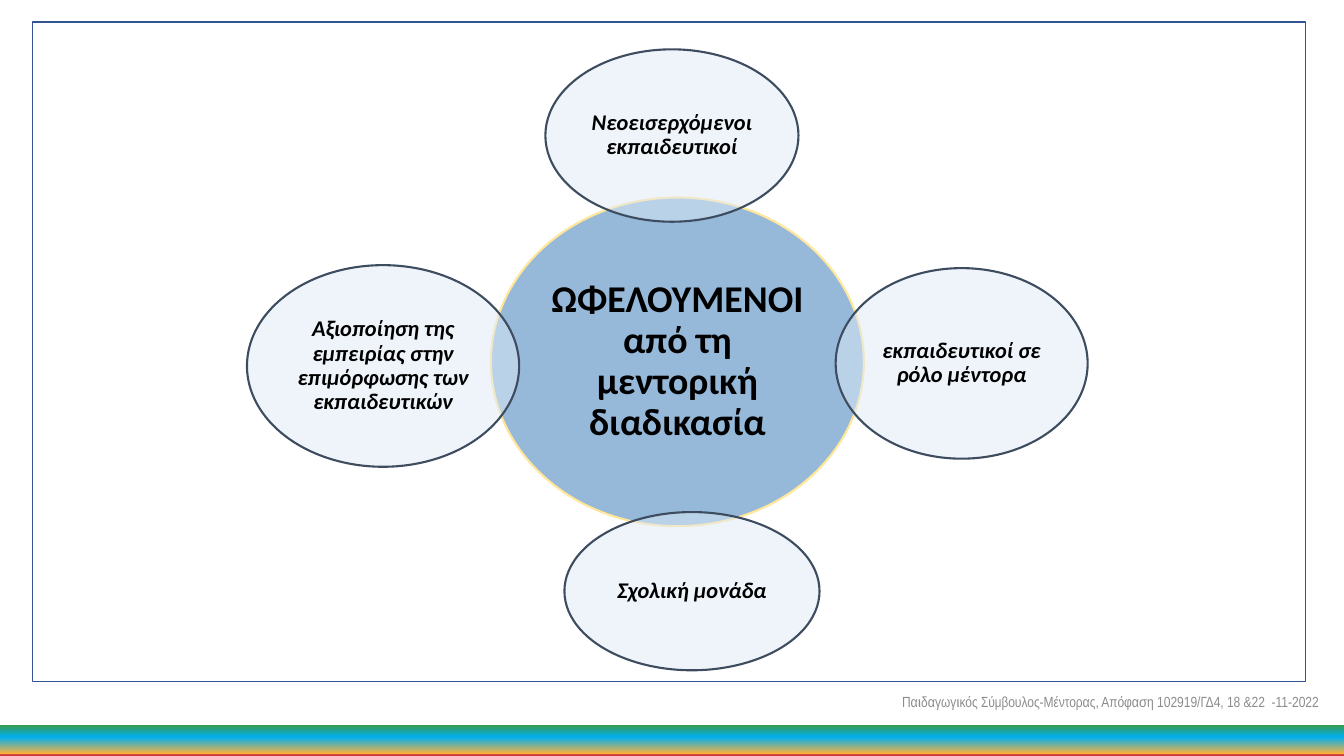
from lxml import etree
from pptx import Presentation
from pptx.dml.color import RGBColor
from pptx.enum.shapes import MSO_SHAPE
from pptx.enum.text import MSO_ANCHOR, PP_ALIGN
from pptx.oxml.ns import qn
from pptx.util import Inches, Pt

RECT, OVAL = MSO_SHAPE.RECTANGLE, MSO_SHAPE.OVAL
MIDDLE, CENTER = MSO_ANCHOR.MIDDLE, PP_ALIGN.CENTER

NAVY = RGBColor(0x32, 0x54, 0x91)
BLUE = RGBColor(0x2E, 0x75, 0xB6)
CREAM = RGBColor(0xFF, 0xE6, 0x99)
PALE = RGBColor(0xDE, 0xEB, 0xF7)
SLATE = RGBColor(0x3E, 0x4C, 0x60)
BLACK = RGBColor(0, 0, 0)
GRAY = RGBColor(0x8C, 0x8C, 0x8C)
STRIPE = [
    (0, RGBColor(0x39, 0x9A, 0x48)),
    (39, RGBColor(0x00, 0xB0, 0xF0)),
    (93, RGBColor(0xFB, 0xB0, 0x3B)),
    (96, RGBColor(0xCC, 0x33, 0x33)),
]

# Left, top, width and height in percent of the slide
FRAME = (2.4, 2.93, 94.73, 87.2)
HUB = (36.53, 26.13, 27.75, 43.47)
NOTE = (66.38, 90.13, 33.6, 5.33)
BAND = (0, 95.87, 100, 4.13)
GROUPS = [
    ("Νεοεισερχόμενοι εκπαιδευτικοί", (40.58, 6.53, 18.83, 22.8)),
    ("εκπαιδευτικοί σε ρόλο μέντορα", (62.18, 35.47, 18.75, 25.2)),
    ("Σχολική μονάδα", (42, 67.73, 18.98, 20.93)),
    ("Αξιοποίηση της εμπειρίας στην επιμόρφωσης των εκπαιδευτικών",
     (18.38, 35.07, 20.25, 26.67)),
]


class Canvas:
    main = "Calibri"
    small = "Arial Narrow"

    def __init__(self, deck):
        self.wide, self.high = deck.slide_width, deck.slide_height
        self.slide = deck.slides.add_slide(deck.slide_layouts[6])

    def place(self, box):
        """Turn percent shares into slide lengths."""
        sides = (self.wide, self.high) * 2
        return [round(share * side / 100) for share, side in zip(box, sides)]

    def shape(self, kind, box, line=None, width=1):
        item = self.slide.shapes.add_shape(kind, *self.place(box))
        item.shadow.inherit = False
        item.fill.background()
        if line is None:
            item.line.fill.background()
        else:
            item.line.color.rgb = line
            item.line.width = Pt(width)
        return item

    def label(self, frame, text, size, color, font, bold=False, slant=False):
        frame.word_wrap = True
        frame.vertical_anchor = MIDDLE
        para = frame.paragraphs[0]
        run = para.add_run()
        run.text = text
        run.font.name = font
        run.font.size = Pt(size)
        run.font.color.rgb = color
        run.font.bold, run.font.italic = bold, slant
        return para

    def bubble(self, text, box, fill, line, size, inset, slant):
        """Draw a half-clear ellipse with centred text."""
        item = self.shape(OVAL, box, line, 1.5)
        item.fill.solid()
        item.fill.fore_color.rgb = fill
        tint = item.element.spPr.find(qn("a:solidFill"))[0]
        etree.SubElement(tint, qn("a:alpha"), val="50000")
        frame = item.text_frame
        frame.margin_left = frame.margin_right = Inches(inset)
        frame.margin_top = frame.margin_bottom = Inches(inset)
        para = self.label(frame, text, size, BLACK, self.main, True, slant)
        para.alignment = CENTER
        para.line_spacing = 0.9

    def note(self, text, box):
        item = self.slide.shapes.add_textbox(*self.place(box))
        self.label(item.text_frame, text, 10.5, GRAY, self.small)

    def band(self, box, stops):
        """Draw a bar shaded from top to bottom."""
        item = self.shape(RECT, box)
        item.fill.gradient()
        item.fill.gradient_angle = 270
        shades = item.element.spPr.find(qn("a:gradFill")).find(qn("a:gsLst"))
        for old in list(shades):
            shades.remove(old)
        for share, color in stops:
            stop = etree.SubElement(shades, qn("a:gs"), pos=str(share * 1000))
            etree.SubElement(stop, qn("a:srgbClr"), val=str(color))


def main():
    deck = Presentation()
    deck.slide_width, deck.slide_height = Inches(13.33), Inches(7.5)
    page = Canvas(deck)
    page.shape(RECT, FRAME, NAVY)
    page.bubble("ΩΦΕΛΟΥΜΕΝΟΙ από τη μεντορική διαδικασία",
                HUB, BLUE, CREAM, 27, 0.04, False)
    for text, box in GROUPS:
        page.bubble(text, box, PALE, SLATE, 16, 0.02, True)
    page.note("Παιδαγωγικός Σύμβουλος-Μέντορας, Απόφαση 102919/ΓΔ4, "
              "18 &22  -11-2022", NOTE)
    page.band(BAND, STRIPE)
    deck.save("out.pptx")


if __name__ == "__main__":
    main()
